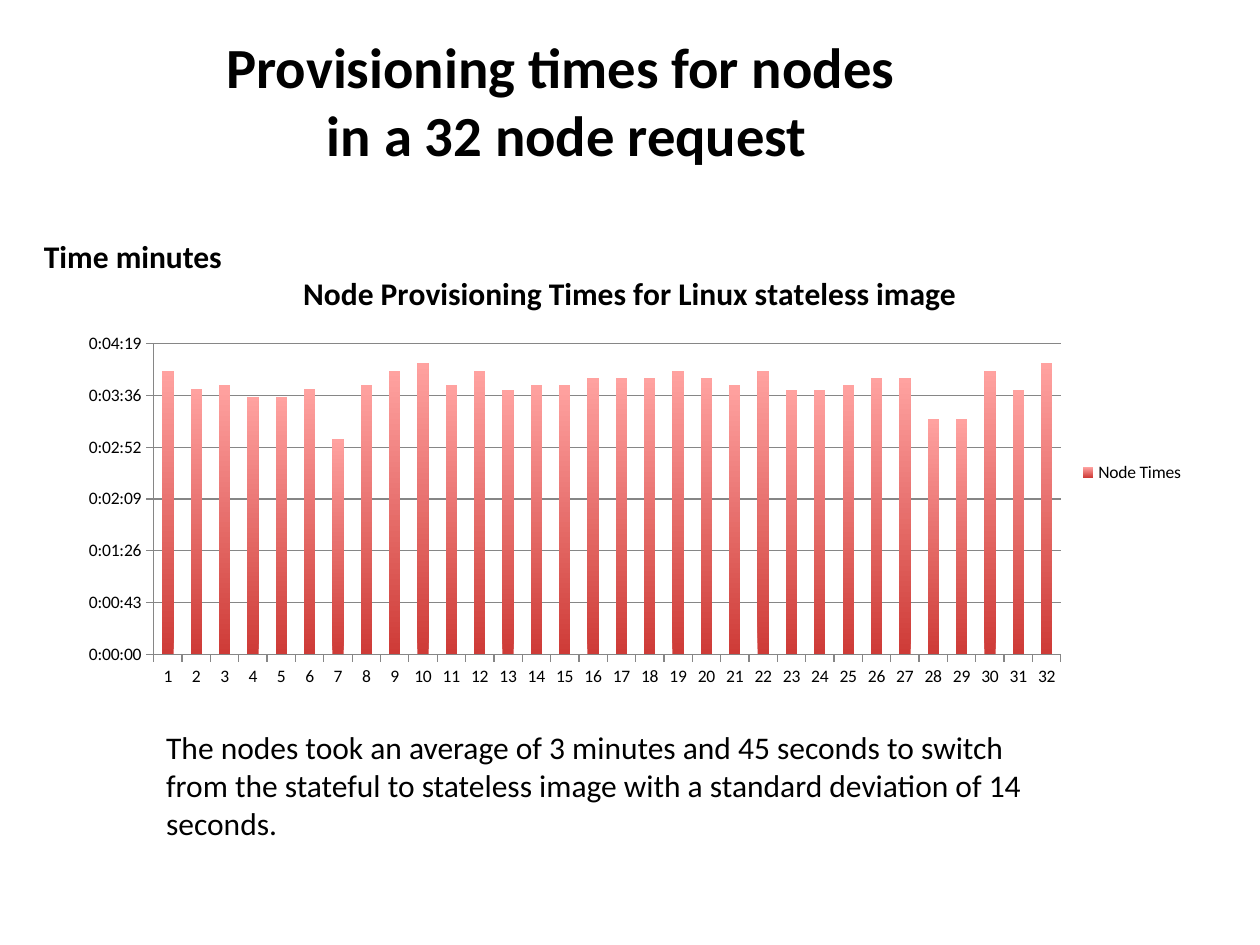
from dataclasses import dataclass

from lxml import etree
from pptx import Presentation
from pptx.chart.data import CategoryChartData
from pptx.dml.color import RGBColor
from pptx.enum.chart import XL_CHART_TYPE as ChartType, XL_LEGEND_POSITION as LegendPosition
from pptx.enum.chart import XL_TICK_MARK as TickMark
from pptx.enum.text import MSO_ANCHOR as Anchor, MSO_AUTO_SIZE as AutoSize, PP_ALIGN as Align
from pptx.oxml.ns import qn
from pptx.util import Inches, Pt


@dataclass(frozen=True)
class Theme:
    """Colours, font and type sizes of the slide."""
    font: str = "Calibri"
    ink: RGBColor = RGBColor(0, 0, 0)
    rule: RGBColor = RGBColor(0x86, 0x86, 0x86)
    bar_bottom: RGBColor = RGBColor(0xCE, 0x3B, 0x37)
    bar_top: RGBColor = RGBColor(0xFF, 0xA2, 0xA0)
    title: float = 32.4
    text: float = 18
    chart: float = 10


NODE_TIMES = (
    0.00274, 0.00256, 0.0026, 0.00249, 0.00249, 0.00256, 0.00208, 0.0026,
    0.00274, 0.00281, 0.0026, 0.00274, 0.00255, 0.0026, 0.0026, 0.00267,
    0.00267, 0.00267, 0.00274, 0.00267, 0.0026, 0.00274, 0.00255, 0.00255,
    0.0026, 0.00267, 0.00267, 0.00227, 0.00227, 0.00274, 0.00255, 0.00281,
)


def assign(target, values):
    """Set each named attribute on the target."""
    for name, value in values.items():
        setattr(target, name, value)


class SlideBuilder:
    """Holds the theme and the current page."""

    def __init__(self, page, theme):
        """Keep the page and its theme."""
        self.page = page
        self.theme = theme

    def style(self, font, size, bold=False):
        """Apply the theme font at a given size."""
        assign(font, {"name": self.theme.font, "size": Pt(size), "bold": bold})
        font.color.rgb = self.theme.ink

    def title(self, lines, left, top, width, height):
        """Place the title with one line break between lines."""
        box = self.page.shapes.title
        assign(box, {"left": Inches(left), "top": Inches(top),
                     "width": Inches(width), "height": Inches(height)})
        assign(box.text_frame, {"vertical_anchor": Anchor.MIDDLE, "auto_size": AutoSize.NONE})
        para = box.text_frame.paragraphs[0]
        para.alignment = Align.CENTER
        for number, line in enumerate(lines):
            if number:
                para.add_line_break()
            span = para.add_run()
            span.text = line
            self.style(span.font, self.theme.title, bold=True)

    def text(self, words, left, top, width, height, bold=False, wrap=True):
        """Add a text box."""
        box = self.page.shapes.add_textbox(
            Inches(left), Inches(top), Inches(width), Inches(height))
        assign(box.text_frame, {"word_wrap": wrap, "auto_size": AutoSize.SHAPE_TO_FIT_TEXT})
        span = box.text_frame.paragraphs[0].add_run()
        span.text = words
        self.style(span.font, self.theme.text, bold)

    def chart(self, heading, series_name, values, left, top, width, height):
        """Add a column chart of times of day."""
        data = CategoryChartData(number_format="h:mm:ss")
        data.categories = [str(number) for number in range(1, len(values) + 1)]
        data.add_series(series_name, values)
        chart = self.page.shapes.add_chart(
            ChartType.COLUMN_CLUSTERED, Inches(left), Inches(top),
            Inches(width), Inches(height), data).chart
        self.style(chart.font, self.theme.chart)
        assign(chart, {"has_title": True, "has_legend": True})
        chart.chart_title.include_in_layout = False
        span = chart.chart_title.text_frame.paragraphs[0].add_run()
        span.text = heading
        self.style(span.font, self.theme.text, bold=True)
        assign(chart.legend, {"position": LegendPosition.RIGHT, "include_in_layout": False})
        self.axes(chart)
        self.bars(chart.plots[0])
        self.plot_area(chart, {"x": 0.08, "y": 0.21, "w": 0.8, "h": 0.7})

    def axes(self, chart):
        """Set the scale, ticks and rules of both axes."""
        scale = chart.value_axis
        assign(scale, {"minimum_scale": 0, "maximum_scale": 0.003, "major_unit": 0.0005,
                       "has_major_gridlines": True})
        assign(scale.tick_labels, {"number_format": "h:mm:ss", "number_format_is_linked": False})
        for axis in (scale, chart.category_axis):
            axis.major_tick_mark = TickMark.OUTSIDE
        for rule in (scale.format, chart.category_axis.format, scale.major_gridlines.format):
            rule.line.color.rgb = self.theme.rule
            rule.line.width = Pt(0.75)

    def bars(self, plot):
        """Fill the columns from dark at the foot to light at the top."""
        assign(plot, {"gap_width": 150, "vary_by_categories": False})
        series = plot.series[0]
        fill = series.format.fill
        fill.gradient()
        fill.gradient_angle = 90
        for stop, color in zip(fill.gradient_stops, (self.theme.bar_bottom, self.theme.bar_top)):
            stop.color.rgb = color
        series.format.line.fill.background()

    def plot_area(self, chart, fractions):
        """Fix the inner plot area as fractions of the chart."""
        area = chart.element.find(".//" + qn("c:plotArea"))
        layout = area.find(qn("c:layout"))
        if layout is None:
            layout = etree.Element(qn("c:layout"))
            area.insert(0, layout)
        manual = etree.SubElement(layout, qn("c:manualLayout"))
        settings = {"layoutTarget": "inner", "xMode": "edge", "yMode": "edge", **fractions}
        for name, value in settings.items():
            etree.SubElement(manual, qn("c:" + name)).set("val", str(value))


def main():
    """Build the provisioning times slide."""
    deck = Presentation()
    assign(deck, {"slide_width": Inches(10), "slide_height": Inches(7.5)})
    slide = SlideBuilder(deck.slides.add_slide(deck.slide_layouts[5]), Theme())
    slide.title(("Provisioning times for nodes ", "in a 32 node request"), 0, 0.17, 9, 1.25)
    slide.chart("Node Provisioning Times for Linux stateless image", "Node Times",
                NODE_TIMES, 0.5, 1.99, 9, 3.52)
    slide.text("The nodes took an average of 3 minutes and 45 seconds to switch from the "
               "stateful to stateless image with a standard deviation of 14 seconds.",
               1.22, 5.73, 7.11, 1.01)
    slide.text("Time minutes", 0.25, 1.83, 1.62, 0.4, bold=True, wrap=False)
    deck.save("out.pptx")


if __name__ == "__main__":
    main()
